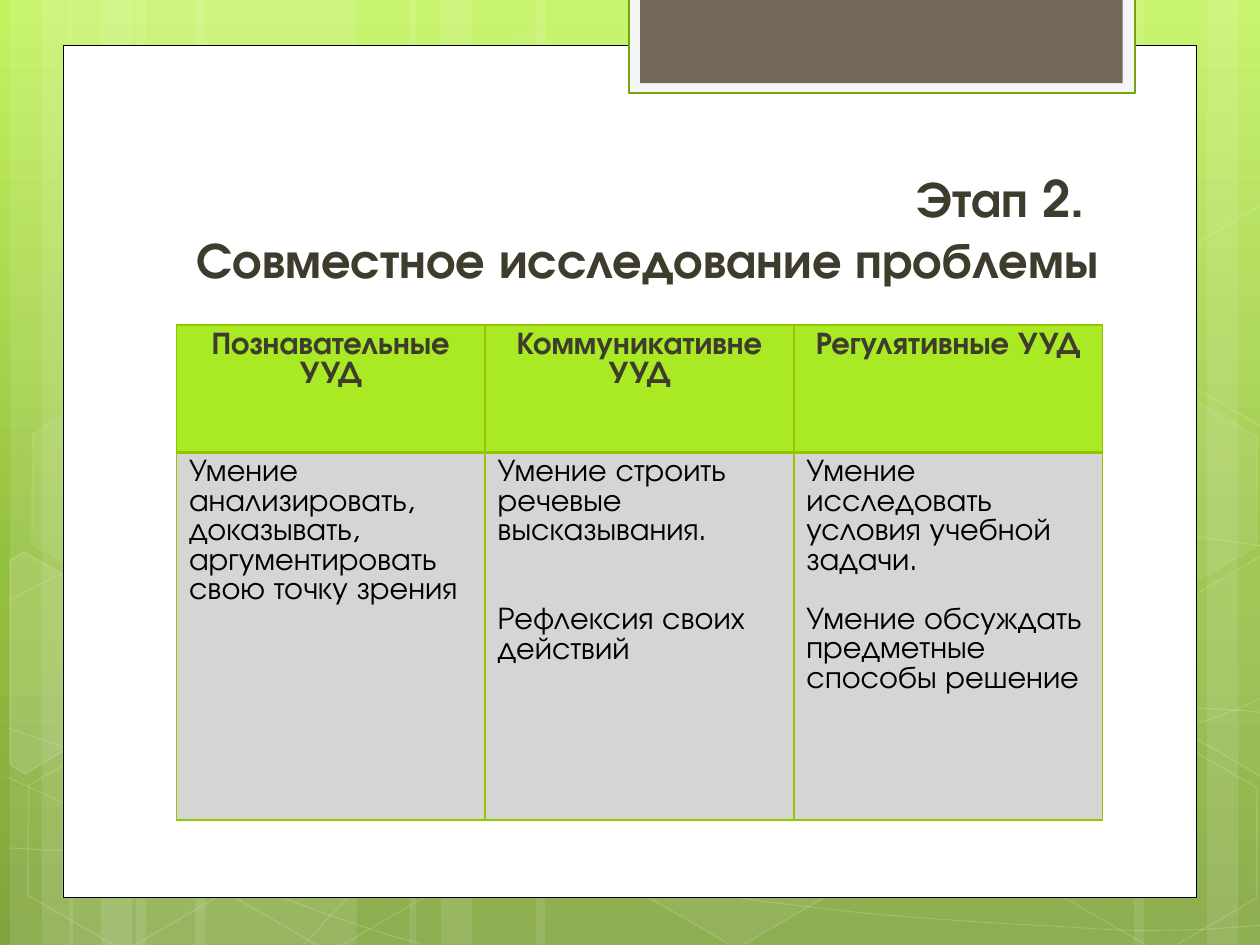
"""Build the slide about the second stage, the joint study of a problem."""
from copy import deepcopy
from dataclasses import dataclass
from typing import Optional

from lxml.etree import SubElement
from pptx import Presentation
from pptx.dml.color import RGBColor
from pptx.enum.shapes import MSO_SHAPE as Shape
from pptx.enum.text import MSO_ANCHOR as Anchor, MSO_AUTO_SIZE as AutoSize, PP_ALIGN as Align
from pptx.oxml.ns import qn
from pptx.util import Inches, Pt

FONT = "TeX Gyre Adventor"
WHITE = RGBColor(0xFF, 0xFF, 0xFF)
BLACK = RGBColor(0x00, 0x00, 0x00)
OLIVE = RGBColor(0x3E, 0x3D, 0x2D)
LIME = RGBColor(0xAA, 0xEA, 0x25)
GRAY = RGBColor(0xD5, 0xD5, 0xD3)
BORDER = RGBColor(0x94, 0xC6, 0x00)
TAB_FILL = RGBColor(0xF5, 0xF5, 0xF5)
TAB_LINE = RGBColor(0x74, 0xA5, 0x10)
BROWN = RGBColor(0x71, 0x68, 0x5A)
GRADIENT = [
    (0, RGBColor(0xC3, 0xF3, 0x5F)),
    (0.62, RGBColor(0x93, 0xBF, 0x3F)),
    (1, RGBColor(0x81, 0xA5, 0x3E)),
]


@dataclass
class Style:
    fill: Optional[RGBColor] = None
    fill_alpha: int = 100
    line: Optional[RGBColor] = None
    line_alpha: int = 100
    width: float = 1


@dataclass
class Box:
    left: float
    top: float
    width: float
    height: float
    style: Style


@dataclass
class Outline:
    points: list
    style: Style


@dataclass
class Column:
    heading: str
    texts: list
    gap: float = 0


STRIPES = [
    (1.08, 1.75), (0.08, 0.5), (0.33, 0.83), (1.55, 1.75), (0.55, 0.5), (0.8, 0.83),
    (7.33, 1.75), (9.58, 0.5), (9, 0.83), (4.25, 3.08), (3.25, 0.5), (3.5, 0.83),
]
CURVES = [
    [(0.07, 6.73), (0.61, 6.76), (1.15, 6.79), (1.9, 6.78), (2.65, 6.77), (3.58, 6.75),
     (4.58, 6.65), (5.58, 6.55), (7, 6.36), (7.92, 6.17), (8.83, 5.98), (9.77, 5.68), (10.07, 5.51)],
    [(0.07, 4.77), (0.36, 4.61), (0.65, 4.46), (1.21, 4.31), (1.78, 4.16), (2.59, 3.94),
     (3.47, 3.87), (4.36, 3.8), (5.44, 3.79), (6.54, 3.87), (7.64, 3.95), (9.47, 4.26), (10.07, 4.34)],
    [(0.06, 6.17), (1.27, 6.72), (2.47, 7.27), (3.34, 7.49)],
    [(0.07, 5.78), (0.38, 5.89), (0.7, 6), (1.28, 6.16), (1.86, 6.31), (2.73, 6.56),
     (3.57, 6.73), (4.4, 6.9), (5.45, 7.08), (6.28, 7.18), (7.11, 7.29), (8, 7.33), (8.53, 7.36),
     (9.05, 7.4), (9.19, 7.38), (9.45, 7.38), (9.71, 7.37), (9.89, 7.35), (10.07, 7.34)],
    [(2.42, 7.49), (2.6, 7.29), (2.78, 7.09), (3.02, 6.91), (3.26, 6.73), (3.6, 6.53),
     (3.88, 6.39), (4.16, 6.25), (4.33, 6.19), (4.7, 6.09), (5.06, 5.99), (5.73, 5.85),
     (6.08, 5.78), (6.44, 5.71), (6.49, 5.71), (6.8, 5.69), (7.11, 5.66), (7.6, 5.63),
     (7.94, 5.62), (8.29, 5.61), (8.86, 5.62), (8.86, 5.62), (8.86, 5.62), (9.53, 5.62),
     (9.53, 5.62), (9.71, 5.63), (9.88, 5.64), (9.97, 5.65), (10.06, 5.66), (10.03, 5.65), (10.06, 5.66)],
]
STRIPE_STYLE = Style(WHITE, 10)
CURVE_STYLE = Style(line=WHITE, line_alpha=20, width=0.5)
EMPTY = Style(line=WHITE, line_alpha=12)
FAINT = Style(WHITE, 7, WHITE, 8)
STRONG = Style(WHITE, 10, WHITE, 12)
HEXAGONS = [
    (3.34, 0.36, Style(WHITE, 4, WHITE, 8)), (4.97, 5.89, Style(WHITE, 6, WHITE, 12)),
    (0.11, 5.91, EMPTY), (0.14, 3.12, FAINT), (1.74, 5.92, EMPTY),
    (7.53, 4.53, STRONG), (8.34, 5.93, EMPTY), (8.34, 3.14, FAINT),
]
CUT_HEXAGONS = [
    Outline([(0.08, 4.45), (0.19, 4.38), (0.96, 4.82), (0.95, 5.7), (0.2, 6.14), (0.08, 6.07)], STRONG),
    Outline([(9.26, 4.85), (10.01, 4.41), (10.09, 4.46), (10.09, 6.13), (10.02, 6.17), (9.26, 5.73)],
            Style(WHITE, 4, WHITE, 12)),
    Outline([(9.26, 2.07), (10.01, 1.63), (10.1, 1.68), (10.09, 3.35), (10.02, 3.39), (9.26, 2.95)], EMPTY),
]
PANELS = [
    Box(0.5, 0.36, 9, 6.76, Style(WHITE, line=BLACK, width=0.5)),
    Box(4.99, -0.02, 4.02, 0.76, Style(TAB_FILL, line=TAB_LINE, width=1.25)),
    Box(5.08, -0.02, 3.83, 0.68, Style(BROWN)),
]
COLUMNS = [
    Column("Познавательные УУД", ["Умение анализировать, доказывать, аргументировать свою точку зрения"]),
    Column("Коммуникативне УУД", ["Умение строить речевые высказывания.", "Рефлексия своих действий"], 34),
    Column("Регулятивные УУД", ["Умение исследовать условия учебной задачи.",
                               "Умение обсуждать предметные способы решение"], 17),
]


def apply_format(target, values: dict) -> None:
    for name, value in values.items():
        setattr(target, name, value)


def set_alpha(element, percent: int) -> None:
    if percent < 100:
        color = element.find(".//" + qn("a:srgbClr"))
        SubElement(color, qn("a:alpha")).set("val", str(percent * 1000))


def apply_style(shape, style: Style) -> None:
    shape.shadow.inherit = False
    properties = shape.element.spPr
    if style.fill is None:
        shape.fill.background()
    else:
        shape.fill.solid()
        shape.fill.fore_color.rgb = style.fill
        set_alpha(properties.find(qn("a:solidFill")), style.fill_alpha)
    if style.line is None:
        shape.line.fill.background()
    else:
        shape.line.color.rgb = style.line
        shape.line.width = Pt(style.width)
        set_alpha(properties.find(qn("a:ln")), style.line_alpha)


def draw_box(slide, box: Box, kind=Shape.RECTANGLE):
    place = [Inches(value) for value in (box.left, box.top, box.width, box.height)]
    shape = slide.shapes.add_shape(kind, *place)
    apply_style(shape, box.style)
    return shape


def draw_hexagon(slide, left: float, top: float, style: Style) -> None:
    shape = draw_box(slide, Box(left, top, 1.75, 1.52, style), Shape.HEXAGON)
    shape.rotation = 30
    shape.adjustments[0] = 0.285


def draw_outline(slide, outline: Outline, close: bool):
    points = [(Inches(x), Inches(y)) for x, y in outline.points]
    builder = slide.shapes.build_freeform(*points[0])
    builder.add_line_segments(points[1:], close=close)
    shape = builder.convert_to_shape()
    apply_style(shape, outline.style)
    return shape


def draw_curve(slide, controls: list) -> None:
    shape = draw_outline(slide, Outline(controls, CURVE_STYLE), False)
    outline_path = shape.element.find(".//" + qn("a:pathLst"))[0]
    segments = outline_path.findall(qn("a:lnTo"))
    for start in range(0, len(segments), 3):
        curve = SubElement(outline_path, qn("a:cubicBezTo"))
        for segment in segments[start:start + 3]:
            curve.append(segment[0])
            outline_path.remove(segment)


def draw_background(slide) -> None:
    fill = slide.background.fill
    fill.gradient()
    fill.gradient_angle = 270
    stops = slide.element.find(".//" + qn("a:gsLst"))
    stops.append(deepcopy(stops[0]))
    for stop, (position, color) in zip(fill.gradient_stops, GRADIENT):
        stop.position = position
        stop.color.rgb = color


def write_title(slide) -> None:
    title = slide.shapes.title
    title.element.getparent().append(title.element)
    apply_format(title, dict(left=Inches(1.14), top=Inches(1.12), width=Inches(7.68), height=Inches(1.22)))
    frame = title.text_frame
    apply_format(frame, dict(vertical_anchor=Anchor.BOTTOM, word_wrap=True, auto_size=AutoSize.NONE))
    frame.text = "Этап 2. \vСовместное исследование проблемы"
    paragraph = frame.paragraphs[0]
    paragraph.alignment = Align.RIGHT
    apply_format(paragraph.font, dict(name=FONT, size=Pt(28.8), bold=True))
    paragraph.font.color.rgb = OLIVE


def set_borders(cell, widths: dict) -> None:
    properties = cell._tc.get_or_add_tcPr()
    for index, (side, width) in enumerate(widths.items()):
        line = properties.makeelement(qn("a:" + side), {"w": str(Pt(width))})
        SubElement(SubElement(line, qn("a:solidFill")), qn("a:srgbClr")).set("val", str(BORDER))
        properties.insert(index, line)


def write_cell(cell, texts: list, gap: float, header: bool) -> None:
    cell.fill.solid()
    cell.fill.fore_color.rgb = LIME if header else GRAY
    set_borders(cell, dict(lnL=1, lnR=1, lnT=1 if header else 2, lnB=2 if header else 1))
    cell.text = "\n".join(texts)
    for index, paragraph in enumerate(cell.text_frame.paragraphs):
        paragraph.alignment = Align.CENTER if header else Align.LEFT
        if index:
            paragraph.space_before = Pt(gap)
        apply_format(paragraph.font, dict(name=FONT, size=Pt(18), bold=header))
        paragraph.font.color.rgb = OLIVE if header else BLACK


def draw_table(slide) -> None:
    frame = slide.shapes.add_table(2, len(COLUMNS), Inches(1.4), Inches(2.58), Inches(7.35), Inches(3.93))
    table = frame.table
    for row, height in zip(table.rows, (1.01, 2.92)):
        row.height = Inches(height)
    for index, column in enumerate(COLUMNS):
        table.columns[index].width = Inches(2.45)
        write_cell(table.cell(0, index), [column.heading], 0, True)
        write_cell(table.cell(1, index), column.texts, column.gap, False)


def main() -> None:
    presentation = Presentation()
    apply_format(presentation, dict(slide_width=Inches(10), slide_height=Inches(7.5)))
    slide = presentation.slides.add_slide(presentation.slide_layouts[5])
    draw_background(slide)
    for left, width in STRIPES:
        draw_box(slide, Box(left, 0, width, 7.5, STRIPE_STYLE))
    for controls in CURVES:
        draw_curve(slide, controls)
    for left, top, style in HEXAGONS:
        draw_hexagon(slide, left, top, style)
    for outline in CUT_HEXAGONS:
        draw_outline(slide, outline, True)
    for panel in PANELS:
        draw_box(slide, panel)
    write_title(slide)
    draw_table(slide)
    presentation.save("out.pptx")


if __name__ == "__main__":
    main()
